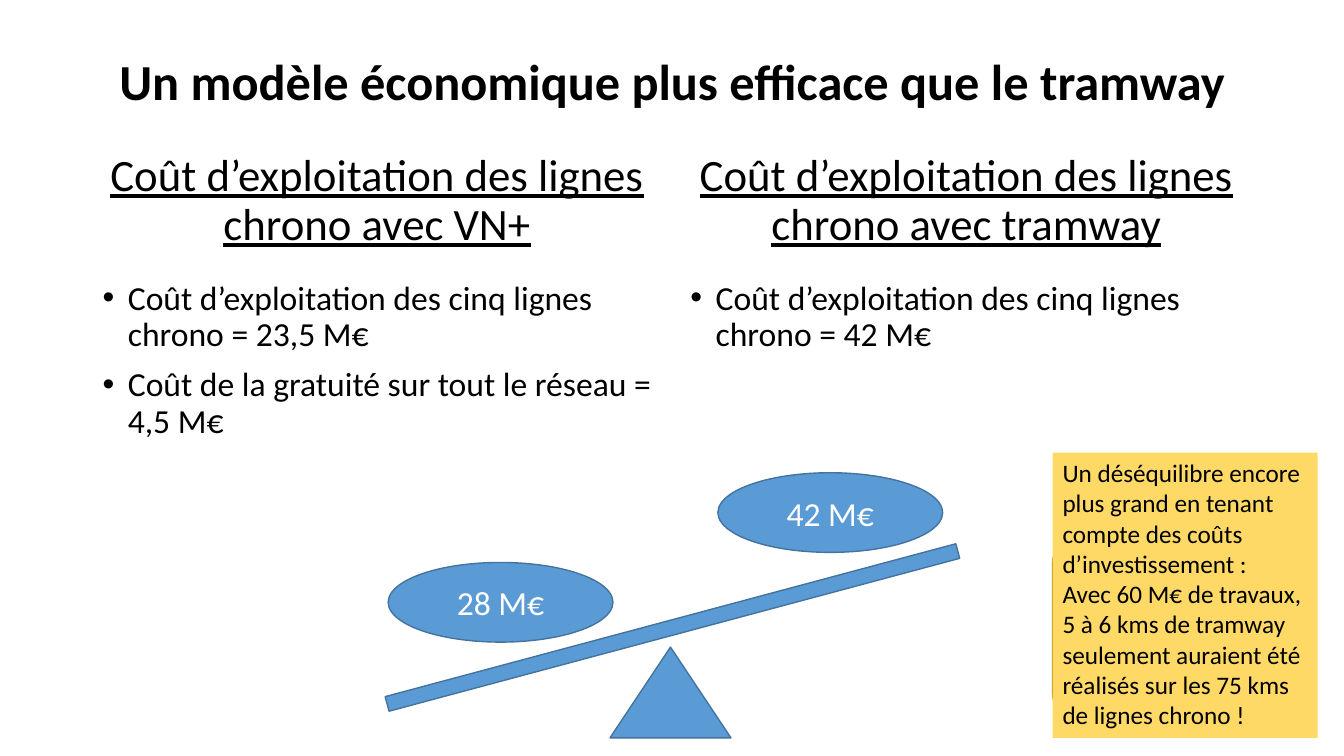
"""Builds the slide comparing the running costs of a bus network and the tramway."""
from lxml import etree
from pptx import Presentation
from pptx import util as u
from pptx.dml.color import RGBColor
from pptx.enum import shapes, text
from pptx.oxml.ns import qn

THEME = {
    "font": "Calibri", "black": "000000", "white": "FFFFFF",
    "blue": "5B9BD5", "blue_edge": "43739E",
    "yellow": "FFD966", "yellow_edge": "BD8E00",
    "title": 36, "heading": 32, "body": 24, "note": 18,
}
TITLE = "Un modèle économique plus efficace que le tramway"
COLUMNS = [
    {"left": 0.92, "width": 5.64,
     "heading": "Coût d’exploitation des lignes chrono avec VN+",
     "points": ["Coût d’exploitation des cinq lignes chrono = 23,5 M€",
                "Coût de la gratuité sur tout le réseau = 4,5 M€"]},
    {"left": 6.75, "width": 5.67,
     "heading": "Coût d’exploitation des lignes chrono avec tramway",
     "points": ["Coût d’exploitation des cinq lignes chrono = 42 M€"]},
]
WEIGHTS = [("28 M€", 3.85, 5.58), ("42 M€", 7.12, 4.69)]
NOTE = [
    "Un déséquilibre encore plus grand en tenant compte des coûts",
    "d’investissement :",
    "Avec 60 M€ de travaux,",
    "5 à 6 kms de tramway",
    "seulement auraient été réalisés sur les 75 kms de lignes chrono !",
]
SHAPE = shapes.MSO_SHAPE


def color(name):
    return RGBColor.from_string(THEME[name])


def write(box, lines, size, ink="black", bold=False, underline=False, align="LEFT",
          anchor="TOP", spacing=None, gap=0, bullet=False):
    frame = box.text_frame
    frame.word_wrap = True
    frame.vertical_anchor = getattr(text.MSO_ANCHOR, anchor)
    for index, line in enumerate(lines):
        para = frame.add_paragraph() if index else frame.paragraphs[0]
        para.alignment = getattr(text.PP_ALIGN, align)
        if spacing:
            para.line_spacing = spacing
        if index:
            para.space_before = u.Pt(gap)
        if bullet:
            props = para._p.get_or_add_pPr()
            props.set("marL", str(u.Inches(0.25)))
            props.set("indent", str(u.Inches(-0.25)))
            etree.SubElement(props, qn("a:buFont")).set("typeface", "Arial")
            etree.SubElement(props, qn("a:buChar")).set("char", "•")
        span = para.add_run()
        span.text = line
        font = span.font
        font.name = THEME["font"]
        font.size = u.Pt(THEME[size])
        font.bold = bold
        font.underline = underline
        font.color.rgb = color(ink)


def add_text(page, place, lines, size, **style):
    box = page.shapes.add_textbox(*map(u.Inches, place))
    write(box, lines, size, **style)


def add_block(page, kind, place, fill="blue", edge="blue_edge", turn=0):
    block = page.shapes.add_shape(kind, *map(u.Inches, place))
    block.shadow.inherit = False
    block.rotation = turn
    block.fill.solid()
    block.fill.fore_color.rgb = color(fill)
    if edge:
        block.line.color.rgb = color(edge)
        block.line.width = u.Pt(1)
    else:
        block.line.fill.background()
    return block


def main():
    deck = Presentation()
    deck.slide_width, deck.slide_height = u.Inches(13.33), u.Inches(7.5)
    page = deck.slides.add_slide(deck.slide_layouts[6])

    add_block(page, SHAPE.ROUNDED_RECTANGLE, (10.44, 5.27, 2.5, 1.92), "yellow", "yellow_edge")
    add_text(page, (0.92, 0.11, 11.5, 1.45), [TITLE], "title", bold=True,
             align="CENTER", anchor="MIDDLE", spacing=0.9)

    for column in COLUMNS:
        left, width = column["left"], column["width"]
        add_text(page, (left, 1.47, width, 1.27), [column["heading"]], "heading",
                 underline=True, align="CENTER", spacing=0.9)
        add_text(page, (left, 2.74, width, 4.03), column["points"], "body",
                 spacing=0.9, gap=10, bullet=True)

    add_block(page, SHAPE.ISOSCELES_TRIANGLE, (6.05, 6.42, 1.2, 0.9))
    add_block(page, SHAPE.RECTANGLE, (3.74, 6.15, 5.86, 0.15), turn=345)
    for label, left, top in WEIGHTS:
        weight = add_block(page, SHAPE.OVAL, (left, top, 2.23, 0.79))
        write(weight, [label], "body", ink="white", align="CENTER", anchor="MIDDLE")

    note = add_block(page, SHAPE.RECTANGLE, (10.44, 4.49, 2.63, 2.83), "yellow", None)
    write(note, NOTE, "note")
    deck.save("out.pptx")


if __name__ == "__main__":
    main()
